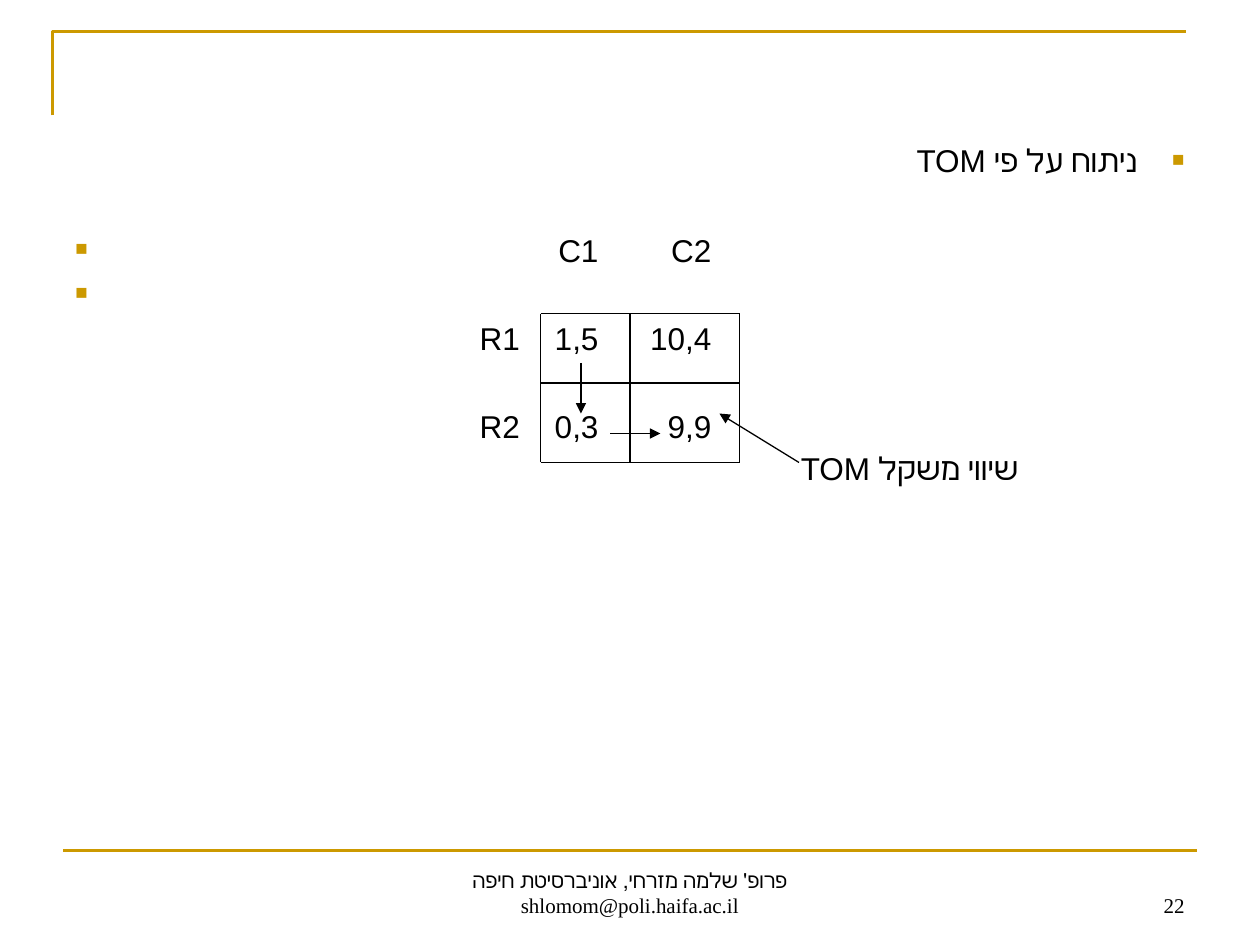
import pptx
import pptx.dml.color
import pptx.enum.shapes
import pptx.enum.text
import pptx.oxml
import pptx.oxml.ns
import pptx.util

Pt = pptx.util.Pt
ALIGN = pptx.enum.text.PP_ALIGN
ANCHOR = pptx.enum.text.MSO_ANCHOR
COLORS = {"accent": "CC9900", "ink": "000000", "paper": "FFFFFF"}


def color(name):
    return pptx.dml.color.RGBColor.from_string(COLORS[name])


def add_child(parent, tag, **attributes):
    child = pptx.oxml.parse_xml(f"<a:{tag} {pptx.oxml.ns.nsdecls('a')}/>")
    for key, value in attributes.items():
        child.set(key, str(value))
    parent.append(child)
    return child


def add_line(slide, start, end, color_name="ink", width=0.75, arrow=False):
    connector = slide.shapes.add_connector(
        pptx.enum.shapes.MSO_CONNECTOR.STRAIGHT, *[Pt(value) for value in (*start, *end)])
    connector.line.color.rgb = color(color_name)
    connector.line.width = Pt(width)
    if arrow:
        line_properties = connector._element.spPr.find(pptx.oxml.ns.qn("a:ln"))
        add_child(line_properties, "tailEnd", type="triangle")
    add_child(connector._element.spPr, "effectLst")


def add_text_box(slide, box, anchor):
    shape = slide.shapes.add_textbox(*[Pt(value) for value in box])
    shape.text_frame.word_wrap = True
    shape.text_frame.vertical_anchor = anchor
    return shape.text_frame


def add_run(paragraph, text, size, font):
    run = paragraph.add_run()
    run.text = text
    run.font.size = Pt(size)
    run.font.name = font
    run.font.color.rgb = color("ink")


def format_paragraph(paragraph, indent=0, hanging=0, bullet=False, rtl=False):
    properties = paragraph._p.get_or_add_pPr()
    properties.set("marL", str(Pt(indent)))
    properties.set("indent", str(Pt(-hanging)))
    if rtl:
        properties.set("rtl", "1")
        paragraph.alignment = ALIGN.RIGHT
    if bullet:
        bullet_color = add_child(properties, "buClr")
        add_child(bullet_color, "srgbClr", val=COLORS["accent"])
        add_child(properties, "buSzPct", val=65000)
        add_child(properties, "buFont", typeface="Arial")
        add_child(properties, "buChar", char="■")
    else:
        add_child(properties, "buNone")


def add_frame(slide, left, top, width, height):
    builder = slide.shapes.build_freeform(Pt(left), Pt(top + height))
    builder.add_line_segments(
        [(Pt(left), Pt(top)), (Pt(left + width), Pt(top))], close=False)
    corner = builder.convert_to_shape()
    corner.fill.background()
    corner.line.color.rgb = color("accent")
    corner.line.width = Pt(1.5)
    corner.shadow.inherit = False
    add_line(slide, (36, 486), (684, 486), "accent", 1.5)


def add_body(slide, box):
    text_frame = add_text_box(slide, box, ANCHOR.TOP)
    rows = [
        ("ניתוח על פי TOM", 4.4, dict(indent=27, hanging=27, bullet=True, rtl=True)),
        (" ", 29.2, dict(bullet=True)),
        (" ", 3.6, dict(bullet=True)),
        ("שיווי משקל TOM", 78.6, dict(indent=95, rtl=True)),
    ]
    for index, (text, gap, layout) in enumerate(rows):
        paragraph = text_frame.add_paragraph() if index else text_frame.paragraphs[0]
        paragraph.space_before = Pt(gap)
        format_paragraph(paragraph, **layout)
        add_run(paragraph, text, 18, "Arial")


def add_matrix_entry(slide, text, right, middle, width=60, height=22):
    box = (right - width, middle - height / 2, width, height)
    text_frame = add_text_box(slide, box, ANCHOR.MIDDLE)
    text_frame.margin_left = text_frame.margin_right = 0
    text_frame.margin_top = text_frame.margin_bottom = 0
    paragraph = text_frame.paragraphs[0]
    paragraph.alignment = ALIGN.RIGHT
    add_run(paragraph, text, 18, "Arial")


def add_matrix(slide, left, top, width, height):
    right, bottom = left + width, top + height
    entries = [["", "C1", "C2"], ["R1", "1,5", "10,4"], ["R2", "0,3", "9,9"]]
    column_ends = (left - 12, left + 33, left + 97.5)
    for row, texts in enumerate(entries):
        for text, column_end in zip(texts, column_ends):
            if text:
                add_matrix_entry(slide, text, column_end, top - 36.4 + row * 50.3)
    for x in (left, left + 51, right):
        add_line(slide, (x, top), (x, bottom))
    for y in (top, top + 39.6, bottom):
        add_line(slide, (left, y), (right, y))
    arrows = [
        ((left + 23, top + 28), (left + 23, top + 57)),
        ((left + 39.6, top + 68.4), (left + 68.4, top + 68.4)),
        ((right + 34, bottom), (right - 11.5, top + 57)),
    ]
    for start, end in arrows:
        add_line(slide, start, end, arrow=True)


def add_footer_text(slide, box, lines, alignment):
    text_frame = add_text_box(slide, box, ANCHOR.BOTTOM)
    paragraph = text_frame.paragraphs[0]
    paragraph.alignment = alignment
    for index, line in enumerate(lines):
        if index:
            paragraph.add_line_break()
        add_run(paragraph, line, 12, "Times New Roman")


def main():
    presentation = pptx.Presentation()
    presentation.slide_width = Pt(720)
    presentation.slide_height = Pt(540)
    slide = presentation.slides.add_slide(presentation.slide_layouts[6])
    slide.background.fill.solid()
    slide.background.fill.fore_color.rgb = color("paper")
    add_frame(slide, 30, 18, 648, 48)
    add_body(slide, (36, 77, 648, 405.4))
    add_matrix(slide, 309, 179.3, 113.6, 85)
    add_footer_text(slide, (516, 492, 168, 36), ["22"], ALIGN.RIGHT)
    add_footer_text(
        slide, (246, 492, 228, 36),
        ["פרופ' שלמה מזרחי, אוניברסיטת חיפה", "shlomom@poli.haifa.ac.il"], ALIGN.CENTER)
    presentation.save("out.pptx")


if __name__ == "__main__":
    main()
